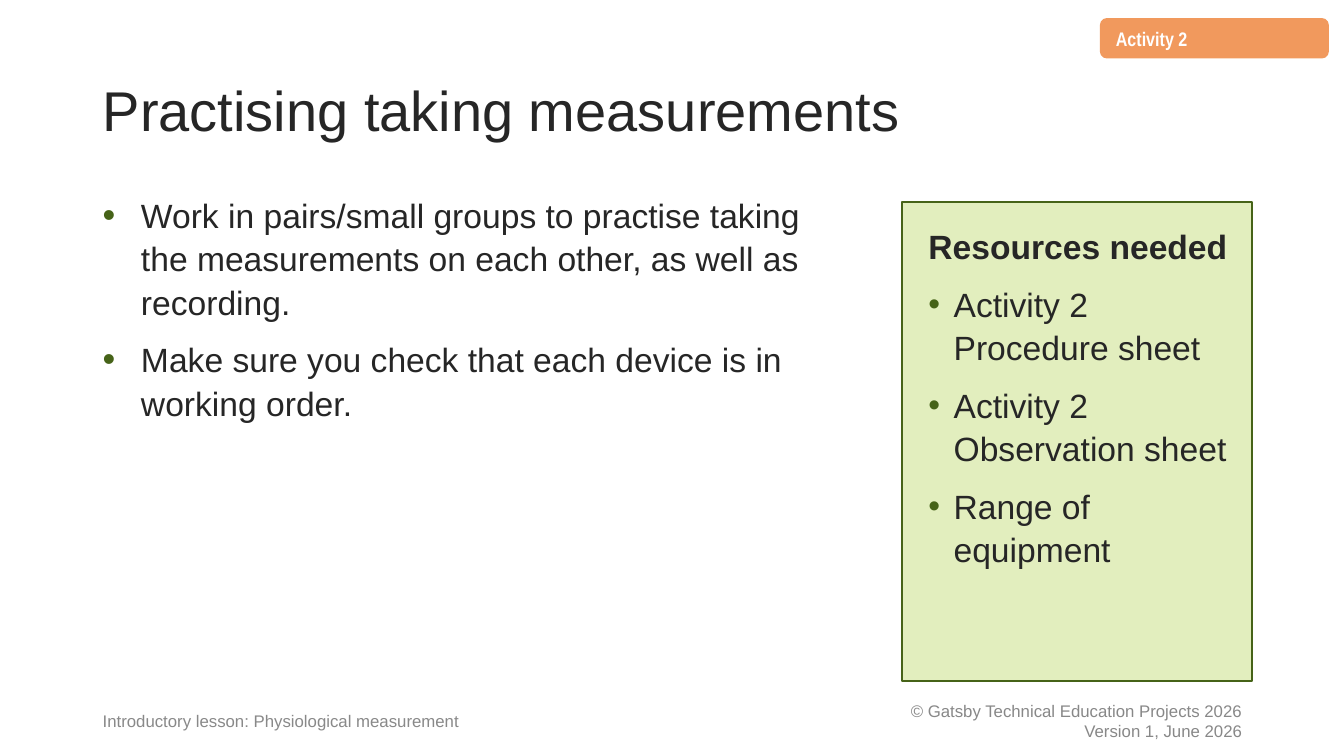
from lxml import etree
from pptx import Presentation
from pptx import util as u
from pptx.dml.color import RGBColor
from pptx.enum import shapes, text
from pptx.oxml.ns import qn

COLORS = {
    "text": "262626",
    "footer": "898989",
    "copyright": "888888",
    "green": "466318",
    "pale_green": "E2EEBE",
    "orange": "F1995D",
    "white": "FFFFFF",
}
LEFT, WIDTH = 0.92, 11.5


def color(name):
    return RGBColor.from_string(COLORS[name])


def add_bullet(paragraph, size_percent):
    properties = paragraph._p.get_or_add_pPr()
    bullet_color = etree.SubElement(properties, qn("a:buClr"))
    etree.SubElement(bullet_color, qn("a:srgbClr"), val=COLORS["green"])
    etree.SubElement(properties, qn("a:buSzPct"), val=str(size_percent * 1000))
    etree.SubElement(properties, qn("a:buFont"), typeface="Arial")
    etree.SubElement(properties, qn("a:buChar"), char="•")


def write(frame, content, size=24, fill="text", font="Arial", bold=False,
          align=text.PP_ALIGN.LEFT, spacing=1.08, before=0, margin=0.0,
          indent=0.0, bullet_size=None):
    """Append one paragraph, using the empty first one if there is one."""
    is_first = not frame.text
    paragraph = frame.paragraphs[0] if is_first else frame.add_paragraph()
    paragraph.alignment = align
    paragraph.line_spacing = spacing
    paragraph.space_before = u.Pt(0 if is_first else before)
    properties = paragraph._p.get_or_add_pPr()
    properties.set("marL", str(u.Inches(margin)))
    properties.set("indent", str(u.Inches(indent)))
    if bullet_size:
        add_bullet(paragraph, bullet_size)
    run = paragraph.add_run()
    run.text = content
    run.font.name = font
    run.font.size = u.Pt(size)
    run.font.bold = bold
    run.font.color.rgb = color(fill)


def prepare_frame(shape, anchor=text.MSO_ANCHOR.TOP):
    frame = shape.text_frame
    frame.word_wrap = True
    frame.auto_size = text.MSO_AUTO_SIZE.NONE
    frame.vertical_anchor = anchor
    return frame


def add_text_box(slide, box, anchor=text.MSO_ANCHOR.TOP):
    return prepare_frame(slide.shapes.add_textbox(*map(u.Inches, box)), anchor)


def add_panel(slide, kind, box, fill, line=None):
    panel = slide.shapes.add_shape(kind, *map(u.Inches, box))
    panel.shadow.inherit = False
    panel.fill.solid()
    panel.fill.fore_color.rgb = color(fill)
    if line:
        panel.line.color.rgb = color(line)
        panel.line.width = u.Pt(1.5)
    else:
        panel.line.fill.background()
    return panel


def add_footer(slide, left, top, width, height):
    middle = text.MSO_ANCHOR.MIDDLE
    lesson = add_text_box(slide, (left, top, 4.6, height), middle)
    write(lesson, "Introductory lesson: Physiological measurement",
          size=12, fill="footer", spacing=1)
    rights_width = 4.5
    rights = add_text_box(
        slide, (left + width - rights_width, top, rights_width, height), middle)
    for line in ("© Gatsby Technical Education Projects 2026",
                 "Version 1, June 2026"):
        write(rights, line, size=12, fill="copyright",
              align=text.PP_ALIGN.RIGHT, spacing=1)


def set_title(slide, left, top, width, height):
    title = slide.shapes.title
    title.left, title.top, title.width, title.height = map(
        u.Inches, (left, top, width, height))
    frame = prepare_frame(title, text.MSO_ANCHOR.MIDDLE)
    write(frame, "Practising taking measurements", size=40, spacing=0.9)


def add_activity_tag(slide, *box):
    tag = add_panel(slide, shapes.MSO_SHAPE.FLOWCHART_ALTERNATE_PROCESS,
                    box, "orange")
    write(prepare_frame(tag), "Activity 2", size=14, fill="white",
          font="Arial Narrow", bold=True, margin=0.29, indent=-0.25)


def add_instructions(slide, *box):
    frame = add_text_box(slide, box)
    for instruction in (
            "Work in pairs/small groups to practise taking the measurements "
            "on each other, as well as recording.",
            "Make sure you check that each device is in working order."):
        write(frame, instruction, before=10, margin=0.5, indent=-0.38,
              bullet_size=108)


def add_resources(slide, left, top, width, height):
    add_panel(slide, shapes.MSO_SHAPE.RECTANGLE, (left, top, width, height),
              "pale_green", "green")
    inset = 0.16
    frame = add_text_box(
        slide, (left + inset, top + inset, width - inset, height - inset))
    write(frame, "Resources needed", bold=True)
    for resource in ("Activity 2 Procedure sheet",
                     "Activity 2 Observation sheet",
                     "Range of equipment"):
        write(frame, resource, before=10, margin=0.25, indent=-0.25,
              bullet_size=100)


def main():
    presentation = Presentation()
    presentation.slide_width = u.Inches(13.33)
    presentation.slide_height = u.Inches(7.5)
    slide = presentation.slides.add_slide(presentation.slide_layouts[5])
    set_title(slide, LEFT, 0.4, WIDTH, 1.45)
    add_activity_tag(slide, 10.91, 0.18, 2.27, 0.4)
    add_instructions(slide, 0.8, 1.85, 7.58, 4.13)
    add_resources(slide, 8.95, 2, 3.47, 4.76)
    add_footer(slide, LEFT, 6.95, WIDTH, 0.4)
    presentation.save("out.pptx")


if __name__ == "__main__":
    main()
